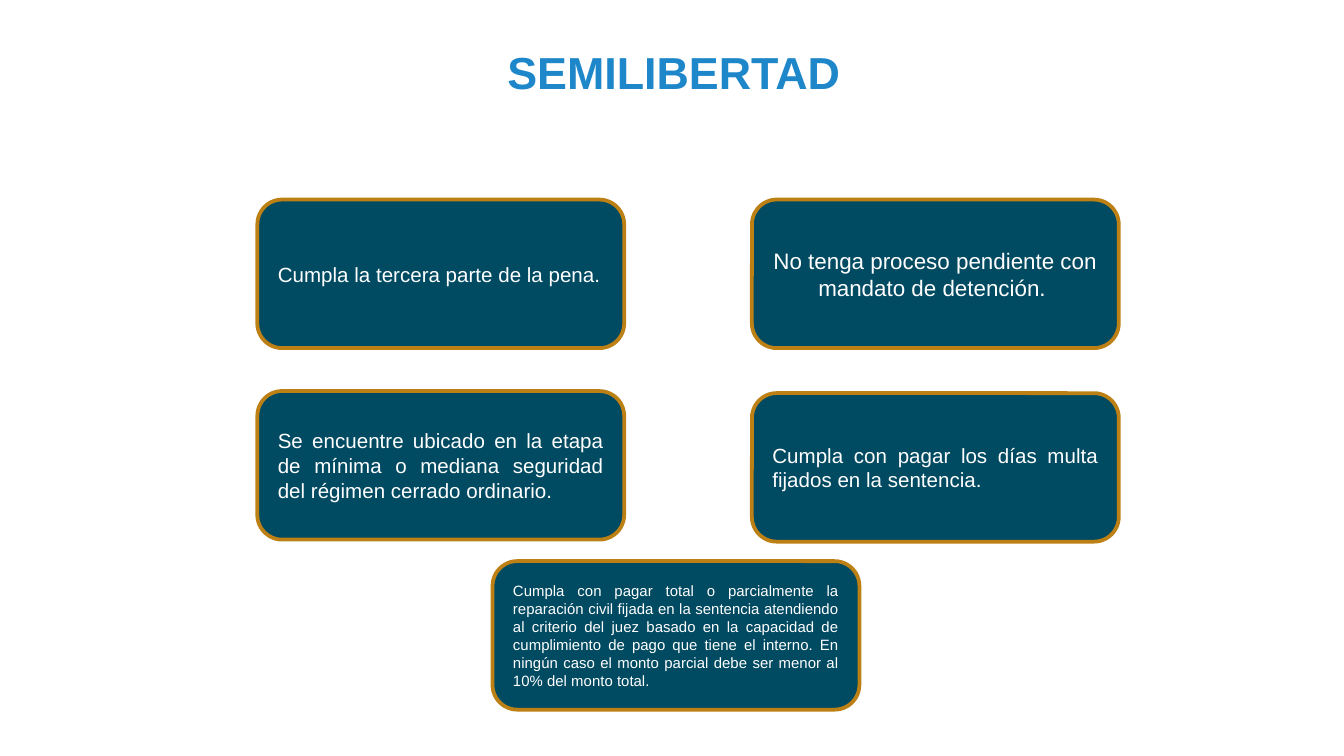
from pptx import Presentation, util as u
from pptx.dml.color import RGBColor
from pptx.enum import shapes, text

PX = 4572  # 200 px to the inch
THEME = {
    "font": "Arial",
    "title": "1E87CA", "fill": "004A62", "edge": "BD8015", "ink": "FFFFFF",
    "head": 24, "large": 12, "body": 11, "small": 8,
}


def write(shape, words, size="body", color="ink", bold=False,
          align=text.PP_ALIGN.JUSTIFY, anchor=text.MSO_ANCHOR.MIDDLE):
    frame = shape.text_frame
    frame.word_wrap = True
    frame.auto_size = text.MSO_AUTO_SIZE.NONE
    frame.vertical_anchor = anchor
    para = frame.paragraphs[0]
    para.alignment = align
    run = para.add_run()
    run.text = words
    run.font.name = THEME["font"]
    run.font.size = u.Pt(THEME[size])
    run.font.bold = bold
    run.font.color.rgb = RGBColor.from_string(THEME[color])


deck = Presentation()
deck.slide_width, deck.slide_height = 2000 * PX, 1125 * PX
slide = deck.slides.add_slide(deck.slide_layouts[5])

# Title
title = slide.shapes.title
title.left, title.top, title.width, title.height = (
    n * PX for n in (735, 56, 1000, 100))
write(title, "SEMILIBERTAD", size="head", color="title", bold=True,
      align=text.PP_ALIGN.LEFT, anchor=text.MSO_ANCHOR.TOP)

# Requirement cards: left, top, words, format
WIDE, HIGH = 546, 221
LEFT, RIGHT, MID = 383, 1119, 733
cards = [
    (LEFT, 297, "Cumpla la tercera parte de la pena.", {}),
    (RIGHT, 297, "No tenga proceso pendiente con mandato de detención. ",
     {"size": "large", "align": text.PP_ALIGN.CENTER}),
    (LEFT, 582, "Se encuentre ubicado en la etapa de mínima o mediana "
     "seguridad del régimen cerrado ordinario. ", {}),
    (RIGHT, 585, "Cumpla con pagar los días multa fijados en la sentencia.",
     {}),
    (MID, 835, "Cumpla con pagar total o parcialmente la reparación civil "
     "fijada en la sentencia atendiendo al criterio del juez basado en la "
     "capacidad de cumplimiento de pago que tiene el interno. En ningún caso "
     "el monto parcial debe ser menor al 10% del monto total.",
     {"size": "small"}),
]
for left, top, words, form in cards:
    card = slide.shapes.add_shape(
        shapes.MSO_SHAPE.ROUNDED_RECTANGLE,
        left * PX, top * PX, WIDE * PX, HIGH * PX)
    card.shadow.inherit = False
    card.fill.solid()
    card.fill.fore_color.rgb = RGBColor.from_string(THEME["fill"])
    card.line.color.rgb = RGBColor.from_string(THEME["edge"])
    card.line.width = u.Pt(2)
    write(card, words, **form)

deck.save("out.pptx")
